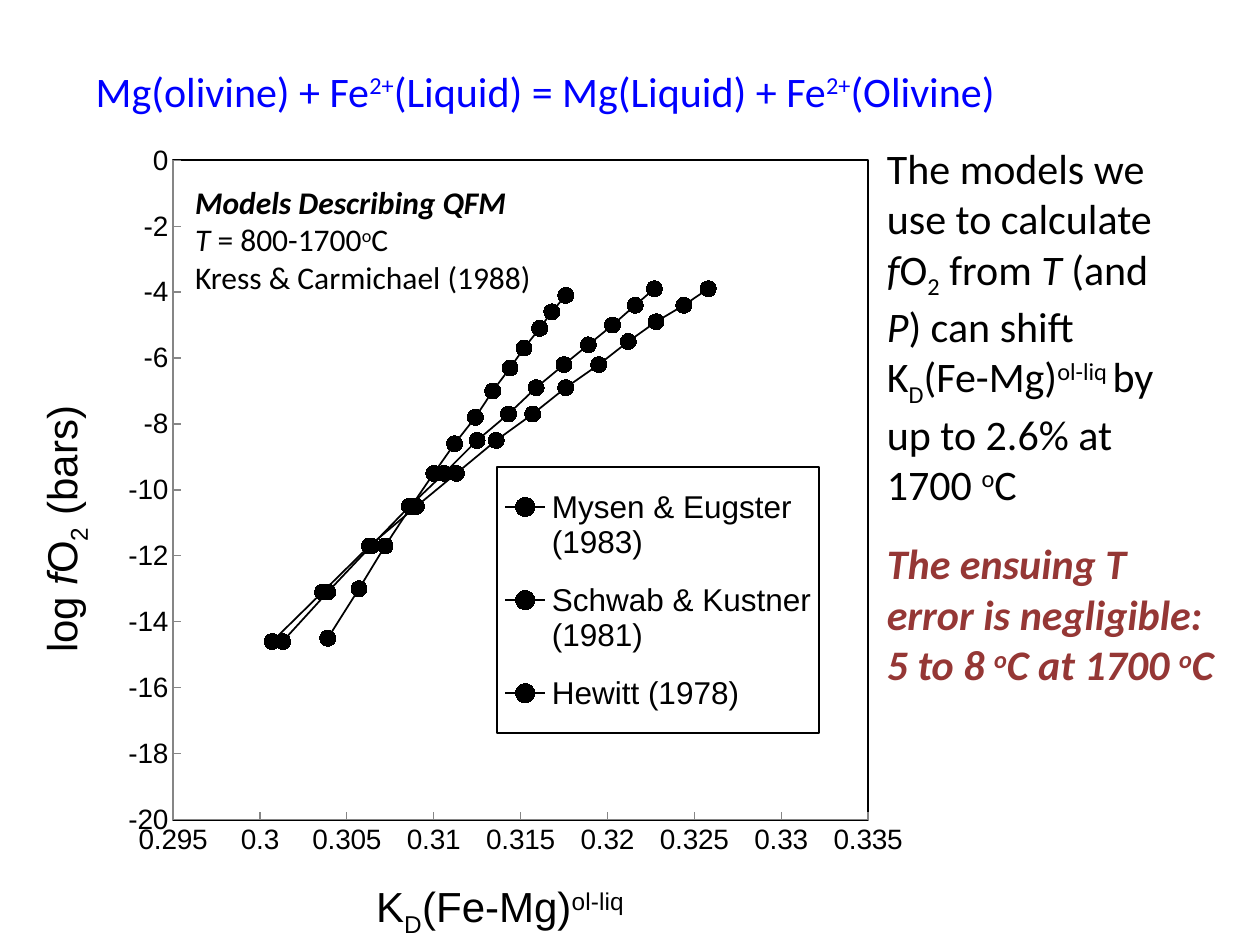
from dataclasses import dataclass

from lxml import etree
from pptx import Presentation
from pptx.chart.data import XyChartData
from pptx.dml.color import RGBColor
from pptx.enum.chart import (
    XL_AXIS_CROSSES as Cross,
    XL_CHART_TYPE as Kind,
    XL_LEGEND_POSITION as Side,
    XL_MARKER_STYLE as Mark,
    XL_TICK_MARK as Tick,
)
from pptx.enum.text import MSO_ANCHOR, MSO_AUTO_SIZE as Fit, PP_ALIGN
from pptx.oxml import parse_xml
from pptx.oxml.ns import nsdecls, qn
from pptx.util import Inches, Pt


@dataclass(frozen=True)
class Theme:
    black: RGBColor = RGBColor(0, 0, 0)
    white: RGBColor = RGBColor(255, 255, 255)
    pale: RGBColor = RGBColor(0xD9, 0xD9, 0xD9)
    gray: RGBColor = RGBColor(0x86, 0x86, 0x86)
    blue: RGBColor = RGBColor(0, 0, 255)
    red: RGBColor = RGBColor(0x95, 0x37, 0x35)
    body: str = "Calibri"
    plot: str = "Arial"
    large: Pt = Pt(24)
    note: Pt = Pt(18)
    tick: Pt = Pt(16)


THEME = Theme()
SHIFT = {"^": "30000", "_": "-25000"}

# Each run is (text, marks): b bold, i italic, ^ superscript, _ subscript.
TITLE = [[("Mg(olivine) + Fe", ""), ("2+", "^"), ("(Liquid) = Mg(Liquid) + Fe", ""),
          ("2+", "^"), ("(Olivine)", "")]]
MODELS = [[("The models we use to calculate ", ""), ("f", "i"), ("O", ""), ("2", "_"),
           (" from ", ""), ("T", "i"), (" (and ", ""), ("P", "i"),
           (") can shift K", ""), ("D", "_"), ("(Fe-Mg)", ""), ("ol-liq ", "^"),
           ("by up to 2.6% at 1700 ", ""), ("o", "^"), ("C", "")]]
RANGE = [[("Models Describing QFM", "bi")],
         [("T", "i"), (" = 800-1700", ""), ("o", "^"), ("C", "")],
         [("Kress & Carmichael (1988)", "")]]
ERROR = [[("The ensuing T error is negligible:", "bi")],
         [("5 to 8 ", "bi"), ("o", "bi^"), ("C at 1700 ", "bi"), ("o", "bi^"),
          ("C", "bi")]]
X_NAME = [[("K", ""), ("D", "_"), ("(Fe-Mg)", ""), ("ol-liq", "^")]]
Y_NAME = [[("log ", ""), ("f", "i"), ("O", ""), ("2", "_"), (" (bars)", "")]]

SERIES = [
    ("Mysen & Eugster (1983)", THEME.black,
     [0.3039, 0.3057, 0.3072, 0.3087, 0.31, 0.3112, 0.3124, 0.3134, 0.3144,
      0.3152, 0.3161, 0.3168, 0.3176],
     [-14.5, -13, -11.7, -10.5, -9.5, -8.6, -7.8, -7, -6.3, -5.7, -5.1, -4.6, -4.1]),
    ("Schwab & Kustner (1981)", THEME.pale,
     [0.3013, 0.3039, 0.3064, 0.3086, 0.3106, 0.3125, 0.3143, 0.3159, 0.3175,
      0.3189, 0.3203, 0.3216, 0.3227],
     [-14.6, -13.1, -11.7, -10.5, -9.5, -8.5, -7.7, -6.9, -6.2, -5.6, -5, -4.4, -3.9]),
    ("Hewitt (1978)", THEME.white,
     [0.3007, 0.3036, 0.3063, 0.309, 0.3113, 0.3136, 0.3157, 0.3176, 0.3195,
      0.3212, 0.3228, 0.3244, 0.3258],
     [-14.6, -13.1, -11.7, -10.5, -9.5, -8.5, -7.7, -6.9, -6.2, -5.5, -4.9, -4.4, -3.9]),
]


def style(font, size, name, color=THEME.black):
    font.size, font.name = size, name
    font.color.rgb = color


def write(frame, lines, size, name=THEME.body, color=THEME.black):
    for i, line in enumerate(lines):
        para = frame.paragraphs[0] if i == 0 else frame.add_paragraph()
        para.alignment = PP_ALIGN.LEFT
        style(para.font, size, name, color)
        para.font.bold = all("b" in marks for _, marks in line)
        same = all("i" in marks for _, marks in line)
        para.font.italic = same
        for text, marks in line:
            run = para.add_run()
            run.text = text
            if "i" in marks and not same:
                run.font.italic = True
            for mark in SHIFT.keys() & set(marks):
                run._r.get_or_add_rPr().set("baseline", SHIFT[mark])


def add_text(slide, box, lines, size, color=THEME.black, wrap=True):
    frame = slide.shapes.add_textbox(*map(Inches, box)).text_frame
    frame.word_wrap = wrap
    frame.auto_size = Fit.SHAPE_TO_FIT_TEXT
    write(frame, lines, size, color=color)


def add_title(slide):
    title = slide.shapes.title
    title.left, title.top, title.width, title.height = map(
        Inches, (0.66, 0.47, 8.32, 0.5))
    frame = title.text_frame
    frame.vertical_anchor = MSO_ANCHOR.TOP
    frame.auto_size = Fit.SHAPE_TO_FIT_TEXT
    write(frame, TITLE, THEME.large, color=THEME.blue)


def place(part, index, x, y, w=None, h=None, inner=False):
    """Give a chart part a fixed place, in fractions of the chart."""
    old = part.find(qn("c:layout"))
    if old is not None:
        index = part.index(old)
        part.remove(old)
    layout = parse_xml(f"<c:layout {nsdecls('c')}><c:manualLayout/></c:layout>")
    pairs = [("layoutTarget", "inner")] if inner else []
    pairs += [("xMode", "edge"), ("yMode", "edge"), ("x", x), ("y", y)]
    if w is not None:
        pairs += [("w", w), ("h", h)]
    for tag, value in pairs:
        etree.SubElement(layout[0], qn(f"c:{tag}")).set("val", str(value))
    part.insert(index, layout)


def frame_xml(fill):
    return parse_xml(
        f"<c:spPr {nsdecls('c', 'a')}>{fill}<a:ln w='12700'><a:solidFill>"
        f"<a:srgbClr val='{THEME.black}'/></a:solidFill></a:ln></c:spPr>")


def set_axis(axis, name, low, high, step, spot, turn=0):
    axis.minimum_scale, axis.maximum_scale, axis.major_unit = low, high, step
    axis.has_major_gridlines = False
    axis.major_tick_mark, axis.minor_tick_mark = Tick.INSIDE, Tick.NONE
    axis.crosses = Cross.MINIMUM
    axis.format.line.color.rgb = THEME.gray
    style(axis.tick_labels.font, THEME.tick, THEME.plot)
    title = axis.axis_title
    write(title.text_frame, name, THEME.large, THEME.plot)
    title.text_frame._txBody.bodyPr.set("rot", str(turn * 60000))
    place(title._element, 1, *spot)


def set_legend(chart):
    chart.has_legend = True
    legend = chart.legend
    legend.position = Side.RIGHT
    legend.include_in_layout = False
    style(legend.font, THEME.note, THEME.plot)
    part = legend._element
    place(part, 1, 0.53, 0.41, 0.36, 0.33)
    part.find(qn("c:overlay")).addnext(frame_xml(
        f"<a:solidFill><a:srgbClr val='{THEME.white}'/></a:solidFill>"))


def add_plot(slide):
    data = XyChartData()
    for name, _, xs, ys in SERIES:
        series = data.add_series(name)
        for x, y in zip(xs, ys):
            series.add_data_point(x, y)
    box = map(Inches, (0.19, 1.08, 7.09, 6.42))
    chart = slide.shapes.add_chart(Kind.XY_SCATTER_LINES, *box, data).chart
    chart.has_title = False
    style(chart.font, Pt(10), THEME.body)
    plot = chart.plots[0]
    plot.vary_by_categories = False
    for series, (_, fill, _, _) in zip(plot.series, SERIES):
        series.smooth = False
        series.format.line.color.rgb = THEME.black
        series.format.line.width = Pt(1)
        marker = series.marker
        marker.style, marker.size = Mark.CIRCLE, 9
        marker.format.fill.solid()
        marker.format.fill.fore_color.rgb = fill
        marker.format.line.color.rgb = THEME.black
    set_axis(chart.category_axis, X_NAME, 0.295, 0.335, 0.005, (0.39, 0.92))
    set_axis(chart.value_axis, Y_NAME, -20, 0, 2, (0.01, 0.33), -90)
    set_legend(chart)
    area = chart._chartSpace.chart.plotArea
    place(area, 0, 0.167, 0.03, 0.778, 0.817, inner=True)
    area.append(frame_xml("<a:noFill/>"))


def main():
    deck = Presentation()
    deck.slide_width, deck.slide_height = Inches(10), Inches(7.5)
    slide = deck.slides.add_slide(deck.slide_layouts[5])
    add_title(slide)
    add_text(slide, (6.94, 1.08, 2.49, 2.93), MODELS, THEME.large)
    add_plot(slide)
    add_text(slide, (1.45, 1.4, 2.91, 1.01), RANGE, THEME.note, wrap=False)
    add_text(slide, (6.94, 4.22, 2.84, 1.31), ERROR, THEME.large, THEME.red)
    deck.save("out.pptx")


if __name__ == "__main__":
    main()
